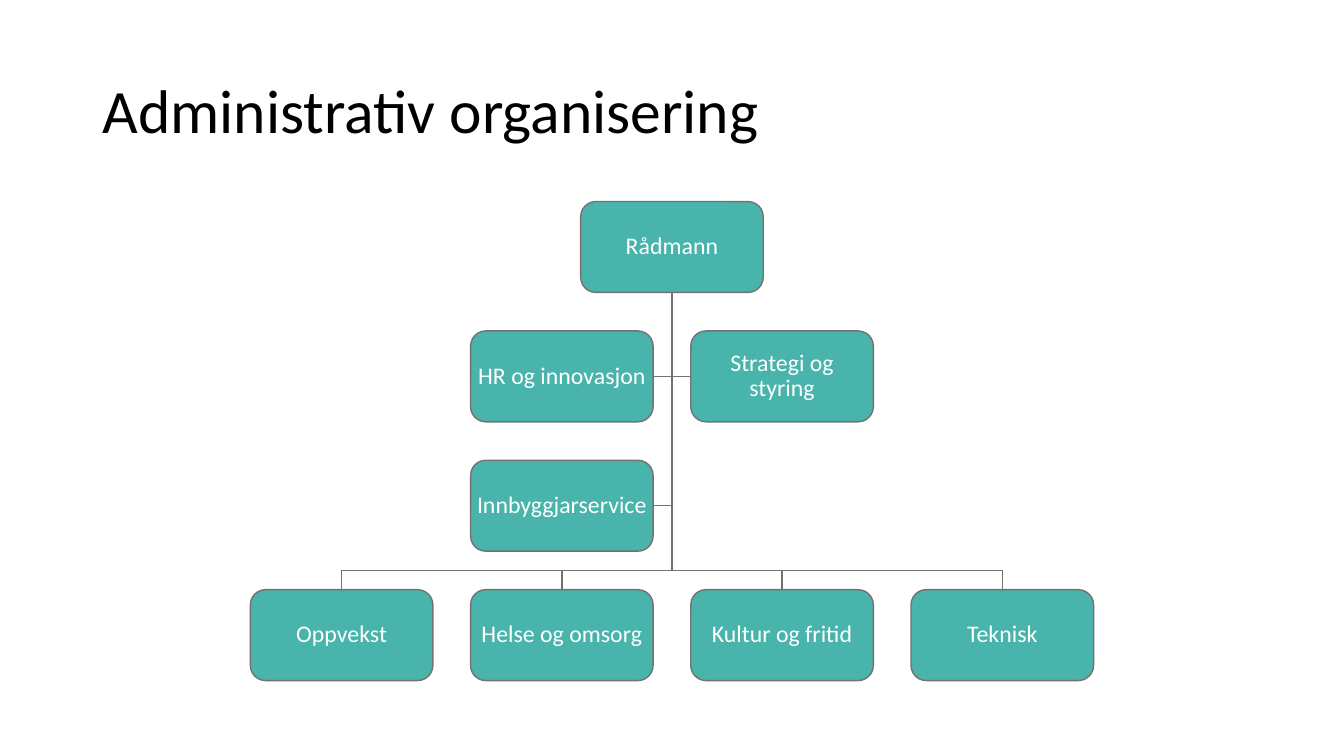
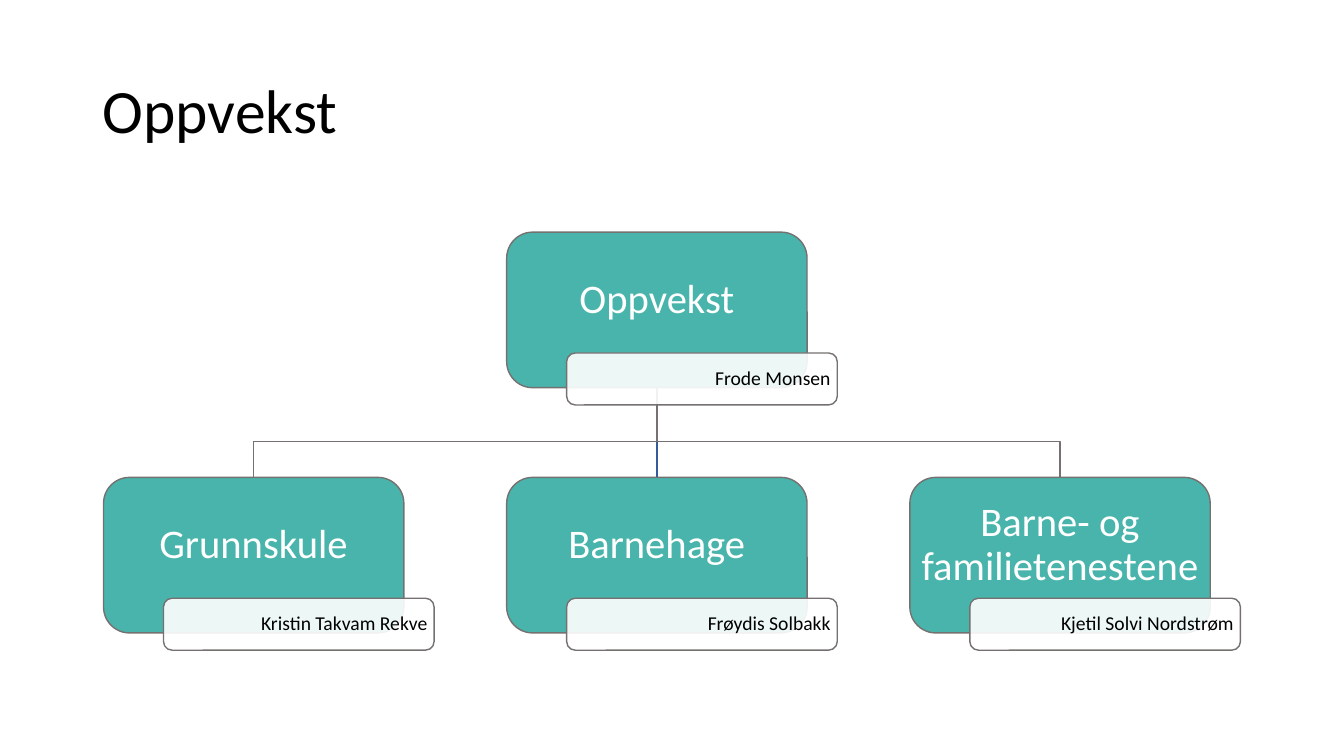
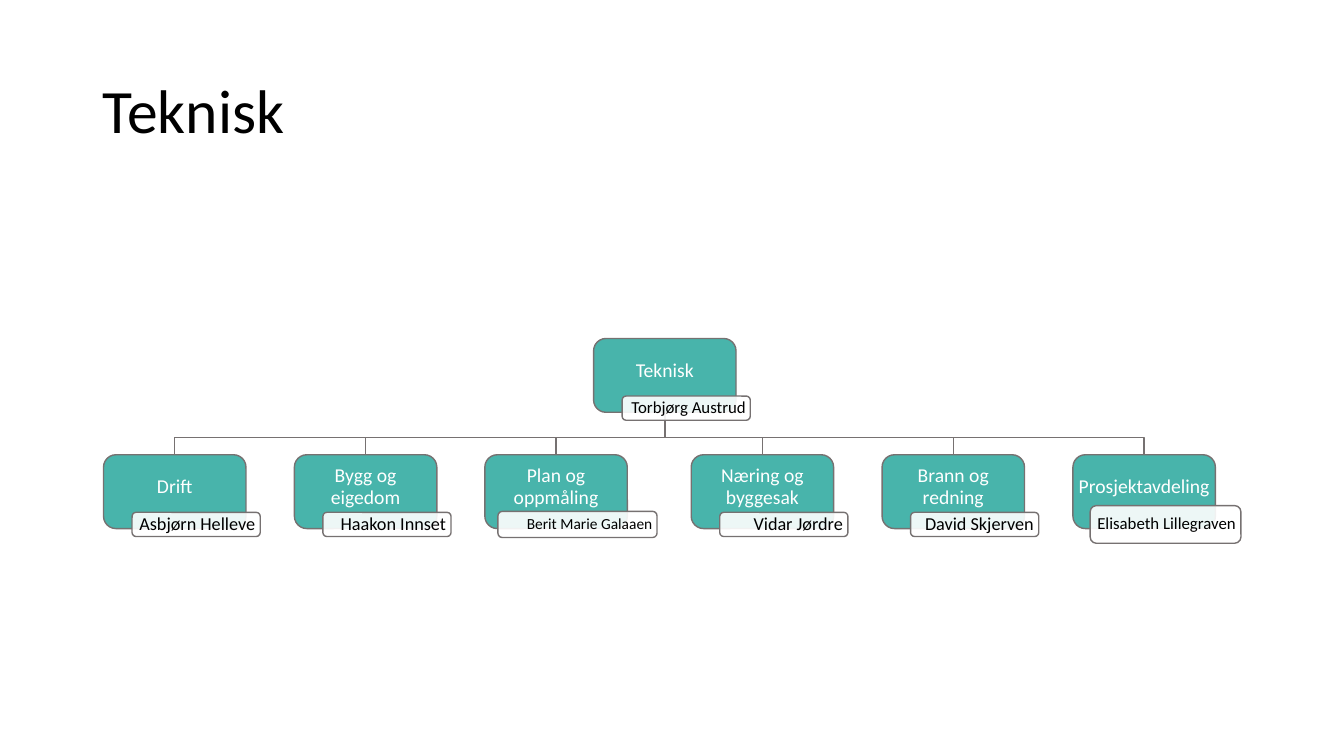
from lxml import etree
from pptx import Presentation
from pptx import util as u
from pptx.dml.color import RGBColor
from pptx.enum import shapes, text
from pptx.oxml.ns import qn

TEAL, GREY, BLUE, WHITE, BLACK = "48B4AB", "767171", "365B9D", "FFFFFF", "000000"
FONT = "Calibri"
LEFT, CENTER, RIGHT = text.PP_ALIGN.LEFT, text.PP_ALIGN.CENTER, text.PP_ALIGN.RIGHT
rgb = RGBColor.from_string


def box(s, x, y, w, h, label, size, color, align, insets, fill=None, alpha=None):
    at = [u.Cm(v) for v in (x, y, w, h)]
    if fill:
        sp = s.shapes.add_shape(shapes.MSO_SHAPE.ROUNDED_RECTANGLE, *at)
        sp.shadow.inherit = False
        sp.fill.solid()
        sp.fill.fore_color.rgb = rgb(fill)
        sp.line.color.rgb = rgb(GREY)
        sp.line.width = u.Pt(1)
        if alpha:
            clr = sp._element.spPr.find(qn("a:solidFill")).find(qn("a:srgbClr"))
            etree.SubElement(clr, qn("a:alpha")).set("val", str(alpha * 1000))
    else:
        sp = s.shapes.add_textbox(*at)
    tf = sp.text_frame
    tf.word_wrap = True
    tf.vertical_anchor = text.MSO_ANCHOR.MIDDLE
    tf.margin_left = tf.margin_right = u.Cm(insets[0])
    tf.margin_top, tf.margin_bottom = u.Cm(insets[1]), u.Cm(insets[2])
    p = tf.paragraphs[0]
    p.alignment = align
    p.line_spacing = 0.9
    r = p.add_run()
    r.text = label
    r.font.name = FONT
    r.font.size = u.Pt(size)
    r.font.color.rgb = rgb(color)
    return sp


def branch(s, start, *bends):
    fb = s.shapes.build_freeform(*start)
    fb.add_line_segments(bends, close=False)
    sp = fb.convert_to_shape()
    sp.shadow.inherit = False
    sp.fill.background()
    sp.line.color.rgb = rgb(GREY)
    sp.line.width = u.Pt(1)


prs = Presentation()
prs.slide_width, prs.slide_height = u.Cm(33.87), u.Cm(19.05)

ADMIN = [
    ("Rådmann", 1.5, 0), ("HR og innovasjon", 1, 1), ("Strategi og styring", 2, 1),
    ("Innbyggjarservice", 1, 2), ("Oppvekst", 0, 3), ("Helse og omsorg", 1, 3),
    ("Kultur og fritid", 2, 3), ("Teknisk", 3, 3),
]
OPPVEKST = [
    ("Oppvekst", 12.77, 5.85, "Frode Monsen", 14, 6.82, 1.31),
    ("Grunnskule", 2.61, 12.03, "Kristin Takvam Rekve", 14, 6.82, 1.31),
    ("Barnehage", 12.77, 12.03, "Frøydis Solbakk", 14, 6.82, 1.31),
    ("Barne- og familietenestene", 22.93, 12.03, "Kjetil Solvi Nordstrøm", 14, 6.82, 1.31),
]
TEKNISK = [
    ("Teknisk", 14.96, 8.53, "Torbjørg Austrud", 12, 3.23, 0.61),
    ("Drift", 2.61, 11.46, "Asbjørn Helleve", 13, 3.23, 0.61),
    ("Bygg og eigedom", 7.42, 11.46, "Haakon Innset", 13, 3.23, 0.61),
    ("Plan og oppmåling", 12.22, 11.46, "Berit Marie Galaaen", 11, 4.01, 0.66),
    ("Næring og byggesak", 17.42, 11.46, "Vidar Jørdre", 13, 3.23, 0.61),
    ("Brann og redning", 22.23, 11.46, "David Skjerven", 13, 3.23, 0.61),
    ("Prosjektavdeling", 27.04, 11.46, "Elisabeth Lillegraven", 12, 3.8, 0.95),
]
admin_units = [(name, 6.31 + 5.55 * col, 5.08 + 3.26 * row, None, 0, 0, 0)
               for name, col, row in ADMIN]
charts = [
    ("Administrativ organisering", admin_units, 4, 4.6, 2.29, 17, 0.03, 14.38),
    ("Oppvekst", OPPVEKST, 1, 7.57, 3.92, 29, 0.53, 11.12),
    ("Teknisk", TEKNISK, 1, 3.59, 1.86, 14, 0.26, 11.02),
]

for title, units, first_child, w, h, size, bottom, bus in charts:
    s = prs.slides.add_slide(prs.slide_layouts[6])
    box(s, 2.34, 1.01, 29.21, 3.68, title, 44, BLACK, LEFT, (0.25, 0.13, 0.13))

    nodes = [box(s, x, y, w, h, name, size, WHITE, CENTER, (0.03, 0.03, bottom), TEAL)
             for name, x, y, *_ in units]
    root, staff, children = nodes[0], nodes[1:first_child], nodes[first_child:]
    bus_y = u.Cm(bus)
    trunk_x, trunk_y = root.left + root.width // 2, root.top + root.height

    for unit in staff:
        edge = unit.left + (unit.width if unit.left < trunk_x else 0)
        y = unit.top + unit.height // 2
        branch(s, (trunk_x, trunk_y), (trunk_x, y), (edge, y))
    for child in children:
        x = child.left + child.width // 2
        if x == trunk_x:
            cn = s.shapes.add_connector(shapes.MSO_CONNECTOR.STRAIGHT, x, trunk_y, x, child.top)
            cn.begin_connect(root, 2)
            cn.end_connect(child, 0)
            cn.line.color.rgb = rgb(BLUE)
            cn.line.width = u.Pt(1)
            etree.SubElement(cn._element.spPr, qn("a:effectLst"))
        else:
            branch(s, (trunk_x, trunk_y), (trunk_x, bus_y), (x, bus_y), (x, child.top))

    for name, x, y, leader, leader_size, tag_w, tag_h in units:
        if leader:
            inset = 0.1 if leader_size > 12 else 0.08
            box(s, x + 0.65 * w - tag_w / 2, y + 0.944 * h - tag_h / 2, tag_w, tag_h,
                leader, leader_size, BLACK, RIGHT, (inset, 0.03, 0.03), WHITE, 90)

prs.save("out.pptx")
